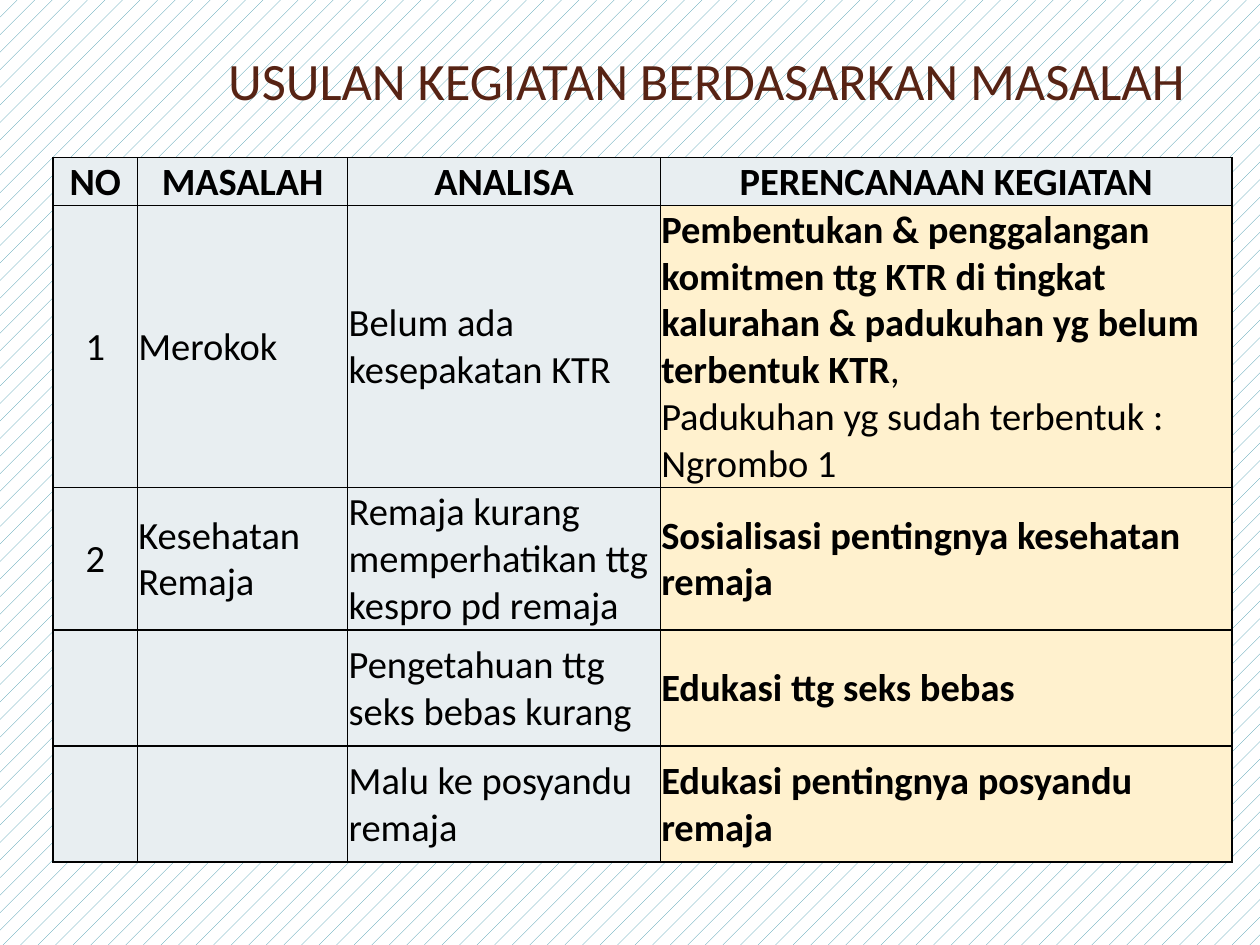
from lxml.etree import SubElement
from pptx import Presentation
from pptx.dml.color import RGBColor
from pptx.enum.dml import MSO_PATTERN
from pptx.enum.text import MSO_ANCHOR, PP_ALIGN
from pptx.oxml.ns import qn
from pptx.util import Cm, Pt

COLORS = {
    "title": "572314",
    "text": "000000",
    "border": "000000",
    "plain": "E8EEF1",
    "plan": "FFF1CE",
    "hatch": "3891A7",
    "paper": "FFFFFF",
}
COLUMN_WIDTHS = [1.7, 4.24, 6.3, 11.53]
ROW_HEIGHTS = [0.86, 3.89, 2.87, 2.34, 2.34]
HEADINGS = ["NO", "MASALAH", "ANALISA", "PERENCANAAN KEGIATAN"]
ACTIVITIES = [
    ["1", "Merokok", "Belum ada kesepakatan KTR",
     [[("Pembentukan & penggalangan komitmen ttg KTR di tingkat kalurahan "
        "& padukuhan yg belum terbentuk KTR", True), (",", False)],
      [("Padukuhan yg sudah terbentuk : Ngrombo 1", False)]]],
    ["2", "Kesehatan Remaja", "Remaja kurang memperhatikan ttg kespro pd remaja",
     "Sosialisasi pentingnya kesehatan remaja"],
    ["", "", "Pengetahuan ttg seks bebas kurang", "Edukasi ttg seks bebas"],
    ["", "", "Malu ke posyandu remaja", "Edukasi pentingnya posyandu remaja"],
]


def color(name):
    return RGBColor.from_string(COLORS[name])


class SlideBuilder:
    font_name = "Calibri"
    title_size = Pt(30)
    table_size = Pt(22)

    def __init__(self, slide):
        self.slide = slide

    def background(self):
        fill = self.slide.background.fill
        fill.patterned()
        fill.pattern = MSO_PATTERN.PERCENT_5
        fill.fore_color.rgb = color("hatch")
        fill.back_color.rgb = color("paper")

    def style(self, paragraph, size, color_name, alignment):
        paragraph.alignment = alignment
        paragraph.font.name = self.font_name
        paragraph.font.size = size
        paragraph.font.color.rgb = color(color_name)

    def title(self, text, left, top, width, height):
        shape = self.slide.shapes.title
        shape.left, shape.top, shape.width, shape.height = left, top, width, height
        shape.text_frame.text = text
        shape.text_frame.vertical_anchor = MSO_ANCHOR.MIDDLE
        self.style(shape.text_frame.paragraphs[0], self.title_size, "title", PP_ALIGN.CENTER)

    def borders(self, cell):
        properties = cell._tc.get_or_add_tcPr()
        for side in ("a:lnL", "a:lnR", "a:lnT", "a:lnB"):
            line = SubElement(properties, qn(side), w=str(Pt(1)))
            fill = SubElement(line, qn("a:solidFill"))
            SubElement(fill, qn("a:srgbClr"), val=COLORS["border"])

    def cell(self, cell, content, fill_name, alignment, bold):
        self.borders(cell)
        cell.fill.solid()
        cell.fill.fore_color.rgb = color(fill_name)
        cell.vertical_anchor = MSO_ANCHOR.MIDDLE
        cell.margin_left = cell.margin_right = cell.margin_top = Cm(0.02)
        cell.margin_bottom = 0
        if not content:
            return
        lines = [[(content, bold)]] if isinstance(content, str) else content
        for index, runs in enumerate(lines):
            frame = cell.text_frame
            paragraph = frame.add_paragraph() if index else frame.paragraphs[0]
            self.style(paragraph, self.table_size, "text", alignment)
            for text, run_bold in runs:
                run = paragraph.add_run()
                run.text = text
                run.font.bold = run_bold

    def table(self, rows, left, top):
        table = self.slide.shapes.add_table(
            len(rows), len(COLUMN_WIDTHS), left, top,
            Cm(sum(COLUMN_WIDTHS)), Cm(sum(ROW_HEIGHTS))).table
        for column, width in zip(table.columns, COLUMN_WIDTHS):
            column.width = Cm(width)
        last = len(COLUMN_WIDTHS) - 1
        for row_index, (row, height) in enumerate(zip(rows, ROW_HEIGHTS)):
            table.rows[row_index].height = Cm(height)
            heading = row_index == 0
            for column_index, content in enumerate(row):
                plan = column_index == last
                centered = heading or column_index == 0
                self.cell(
                    table.cell(row_index, column_index), content,
                    "plan" if plan and not heading else "plain",
                    PP_ALIGN.CENTER if centered else PP_ALIGN.LEFT,
                    heading or plan)


def main():
    presentation = Presentation()
    presentation.slide_width = Cm(25.4)
    presentation.slide_height = Cm(19.05)
    builder = SlideBuilder(presentation.slides.add_slide(presentation.slide_layouts[5]))
    builder.background()
    builder.title("USULAN KEGIATAN BERDASARKAN MASALAH", Cm(3.94), Cm(0.43), Cm(20.62), Cm(2.34))
    builder.table([HEADINGS, *ACTIVITIES], Cm(1.07), Cm(3.18))
    presentation.save("out.pptx")


if __name__ == "__main__":
    main()
